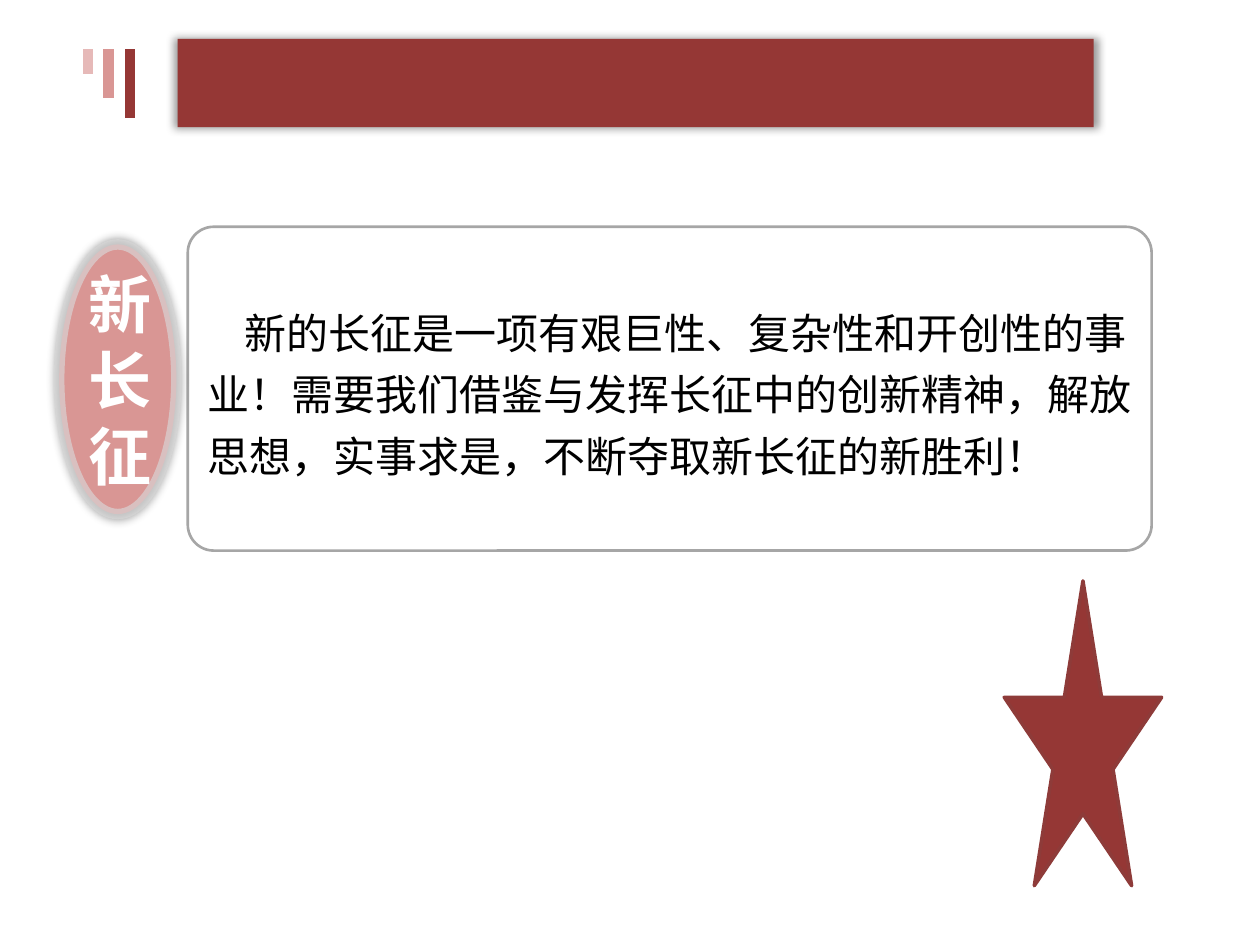
from dataclasses import dataclass

from lxml.etree import SubElement
from pptx import Presentation
from pptx.dml.color import RGBColor
from pptx.enum.shapes import MSO_CONNECTOR, MSO_SHAPE
from pptx.enum.text import MSO_ANCHOR, PP_ALIGN
from pptx.oxml.ns import qn
from pptx.shapes.autoshape import Shape
from pptx.slide import Slide
from pptx.util import Inches, Pt

FONT = "Noto Sans CJK SC"
COLORS = {
    "deep": "953735", "rose": "D99694", "pale": "E6B9B8", "edge": "8E3B39",
    "frame": "A6A6A6", "ring": "D9D9D9", "black": "000000", "white": "FFFFFF",
}
MESSAGE = [
    "新的长征是一项有艰巨性、复杂性和开创性的事",
    "业！需要我们借鉴与发挥长征中的创新精神，解放",
    "思想，实事求是，不断夺取新长征的新胜利！",
]


@dataclass
class Box:
    kind: MSO_SHAPE
    left: float
    top: float
    width: float
    height: float
    fill: str | None = None
    line: str | None = None
    weight: float = 0
    glow: bool = False


@dataclass
class Bar:
    x: float
    bottom: float
    color: str


BARS = [Bar(1.03, 0.94, "deep"), Bar(0.86, 0.78, "rose"), Bar(0.7, 0.59, "pale")]
BAR_TOP = 0.39


def rgb(name: str) -> RGBColor:
    return RGBColor.from_string(COLORS[name])


def add_glow(shape: Shape) -> None:
    effects = shape._element.spPr.find(qn("a:effectLst"))
    shadow = SubElement(effects, qn("a:outerShdw"), blurRad=str(Pt(5)), dist="0",
                        sx="101000", sy="101000", algn="ctr", rotWithShape="0")
    tint = SubElement(shadow, qn("a:srgbClr"), val=COLORS["black"])
    SubElement(tint, qn("a:alpha"), val="40000")


def add_box(slide: Slide, box: Box) -> Shape:
    shape = slide.shapes.add_shape(box.kind, Inches(box.left), Inches(box.top),
                                   Inches(box.width), Inches(box.height))
    shape.shadow.inherit = False
    if box.fill:
        shape.fill.solid()
        shape.fill.fore_color.rgb = rgb(box.fill)
    else:
        shape.fill.background()
    if box.line:
        shape.line.color.rgb = rgb(box.line)
        shape.line.width = Pt(box.weight)
    else:
        shape.line.fill.background()
    if box.glow:
        add_glow(shape)
    return shape


def add_bar(slide: Slide, bar: Bar) -> None:
    line = slide.shapes.add_connector(MSO_CONNECTOR.STRAIGHT, Inches(bar.x), Inches(BAR_TOP),
                                      Inches(bar.x), Inches(bar.bottom))
    line.line.color.rgb = rgb(bar.color)
    line.line.width = Pt(6)
    SubElement(line._element.spPr, qn("a:effectLst"))


def write(shape: Shape, lines: list[str], *, size: float, color: str, bold: bool = False,
          align: PP_ALIGN = PP_ALIGN.LEFT, spacing: float | None = None,
          indent: float = 0, wrap: bool = True) -> None:
    frame = shape.text_frame
    frame.word_wrap = wrap
    frame.vertical_anchor = MSO_ANCHOR.MIDDLE
    for index, text in enumerate(lines):
        paragraph = frame.add_paragraph() if index else frame.paragraphs[0]
        paragraph.alignment = align
        if spacing:
            paragraph.line_spacing = Pt(spacing)
        if indent and index == 0:
            paragraph._p.get_or_add_pPr().set("indent", str(Inches(indent)))
        run = paragraph.add_run()
        run.text = text
        run.font.size = Pt(size)
        run.font.bold = bold
        run.font.color.rgb = rgb(color)
        run.font.name = FONT
        SubElement(run.font._element, qn("a:ea"), typeface=FONT)


def main() -> None:
    """Build the New Long March slide."""
    deck = Presentation()
    deck.slide_width, deck.slide_height = Inches(10), Inches(7.5)
    slide = deck.slides.add_slide(deck.slide_layouts[6])

    message = add_box(slide, Box(MSO_SHAPE.ROUNDED_RECTANGLE, 1.49, 1.8, 7.65, 2.57,
                                 line="frame", weight=1.5))
    message.adjustments[0] = 0.08
    write(message, MESSAGE, size=24, color="black", spacing=35, indent=0.29, wrap=False)

    badge = add_box(slide, Box(MSO_SHAPE.OVAL, 0.47, 1.94, 0.93, 2.14, fill="rose",
                               line="ring", weight=6, glow=True))
    ring = badge.line._ln.find(f".//{qn('a:srgbClr')}")
    SubElement(ring, qn("a:alpha"), val="64000")
    write(badge, ["新长征"], size=36, color="white", bold=True, align=PP_ALIGN.CENTER)

    add_box(slide, Box(MSO_SHAPE.RECTANGLE, 1.41, 0.31, 7.27, 0.7, fill="deep", glow=True))
    for bar in BARS:
        add_bar(slide, bar)
    add_box(slide, Box(MSO_SHAPE.STAR_5_POINT, 7.97, 4.61, 1.25, 2.42, fill="deep",
                       line="edge", weight=2))
    deck.save("out.pptx")


if __name__ == "__main__":
    main()
